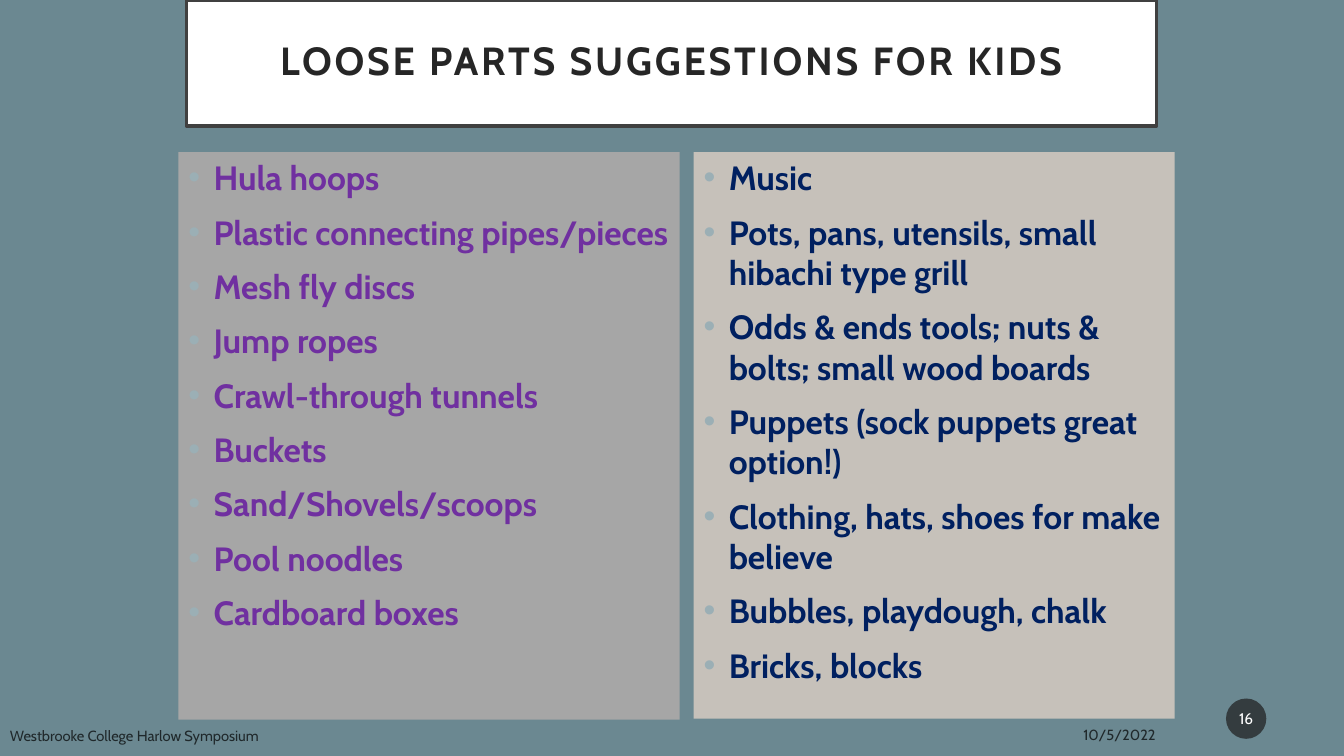
from lxml.etree import SubElement
from pptx import Presentation
from pptx.dml.color import RGBColor
from pptx.enum.shapes import MSO_SHAPE
from pptx.enum.text import MSO_ANCHOR, MSO_AUTO_SIZE, PP_ALIGN
from pptx.oxml.ns import qn
from pptx.util import Inches, Pt

COLORS = {
    "background": "6B8891", "title_fill": "FFFFFF", "title_line": "404040",
    "title_text": "262626", "left_fill": "A6A6A6", "left_text": "7030A0",
    "right_fill": "C6C1BA", "right_text": "002060", "bullet": "9BAFB5",
    "footer": "000000", "badge": "1D1D1D", "badge_text": "FFFFFF",
}


def paint(fill, color, opacity=100):
    fill.solid()
    fill.fore_color.rgb = RGBColor.from_string(COLORS[color])
    if opacity < 100:
        color_node = next(fill._xPr.iter(qn("a:srgbClr")))
        SubElement(color_node, qn("a:alpha"), val=str(opacity * 1000))


def write(para, text, size, color, bold=False, opacity=100):
    para.text = text
    para.font.name = "Cabin"
    para.font.size = Pt(size)
    para.font.bold = bold
    paint(para.font.fill, color, opacity)


deck = Presentation()
deck.slide_width, deck.slide_height = Inches(13.33), Inches(7.5)
page = deck.slides.add_slide(deck.slide_layouts[5])
paint(page.background.fill, "background")

# Title
title = page.shapes.title
title.left, title.top = Inches(1.85), Inches(0)
title.width, title.height = Inches(9.62), Inches(1.25)
paint(title.fill, "title_fill")
paint(title.line.fill, "title_line")
title.line.width = Pt(2.5)
frame = title.text_frame
frame.auto_size = MSO_AUTO_SIZE.NONE
frame.vertical_anchor = MSO_ANCHOR.MIDDLE
frame.margin_left = frame.margin_right = Inches(0.2)
frame.margin_top = frame.margin_bottom = Inches(0.2)
para = frame.paragraphs[0]
write(para, "LOOSE PARTS SUGGESTIONS FOR KIDS", 28, "title_text", bold=True)
para.alignment = PP_ALIGN.CENTER
para.line_spacing = 0.9
para.runs[0].font._element.set("spc", "200")

# Two bulleted panels
panels = [
    ("left", 1.77, 4.97, 5.63, [
        "Hula hoops", "Plastic connecting pipes/pieces", "Mesh fly discs",
        "Jump ropes", "Crawl-through tunnels", "Buckets",
        "Sand/Shovels/scoops", "Pool noodles", "Cardboard boxes"]),
    ("right", 6.88, 4.77, 5.62, [
        "Music", "Pots, pans, utensils, small hibachi type grill",
        "Odds & ends tools; nuts & bolts; small wood boards",
        "Puppets (sock puppets great option!)",
        "Clothing, hats, shoes for make believe",
        "Bubbles, playdough, chalk", "Bricks, blocks"]),
]
for side, left, width, height, items in panels:
    panel = page.shapes.add_textbox(
        Inches(left), Inches(1.51), Inches(width), Inches(height))
    paint(panel.fill, f"{side}_fill")
    frame = panel.text_frame
    frame.word_wrap = True
    for index, item in enumerate(items):
        para = frame.add_paragraph() if index else frame.paragraphs[0]
        write(para, item, 24, f"{side}_text", bold=True)
        para.space_before = Pt(10)
        props = para._p.get_or_add_pPr()
        props.set("marL", str(Inches(0.25)))
        props.set("indent", str(Inches(-0.25)))
        bullet_color = SubElement(props, qn("a:buClr"))
        SubElement(bullet_color, qn("a:srgbClr"), val=COLORS["bullet"])
        SubElement(props, qn("a:buFont"), typeface="Arial")
        SubElement(props, qn("a:buChar"), char="•")
        props.append(props.find(qn("a:defRPr")))  # schema order: after bullets

# Date and event name
footers = [
    ("10/5/2022", 8.55, 7.11, 3.01, PP_ALIGN.RIGHT),
    ("Westbrooke College Harlow Symposium", 0, 7.12, 6.45, PP_ALIGN.LEFT),
]
for text, left, top, width, alignment in footers:
    footer = page.shapes.add_textbox(
        Inches(left), Inches(top), Inches(width), Inches(0.35))
    frame = footer.text_frame
    frame.word_wrap = True
    frame.vertical_anchor = MSO_ANCHOR.MIDDLE
    write(frame.paragraphs[0], text, 10.5, "footer", opacity=70)
    frame.paragraphs[0].alignment = alignment

# Page number badge
badge = page.shapes.add_shape(
    MSO_SHAPE.OVAL, Inches(12.16), Inches(6.93), Inches(0.4), Inches(0.4))
badge.shadow.inherit = False
paint(badge.fill, "badge", opacity=70)
badge.line.fill.background()
frame = badge.text_frame
frame.margin_left = frame.margin_right = Inches(0.02)
frame.vertical_anchor = MSO_ANCHOR.MIDDLE
write(frame.paragraphs[0], "16", 11, "badge_text")
frame.paragraphs[0].alignment = PP_ALIGN.CENTER

deck.save("out.pptx")
